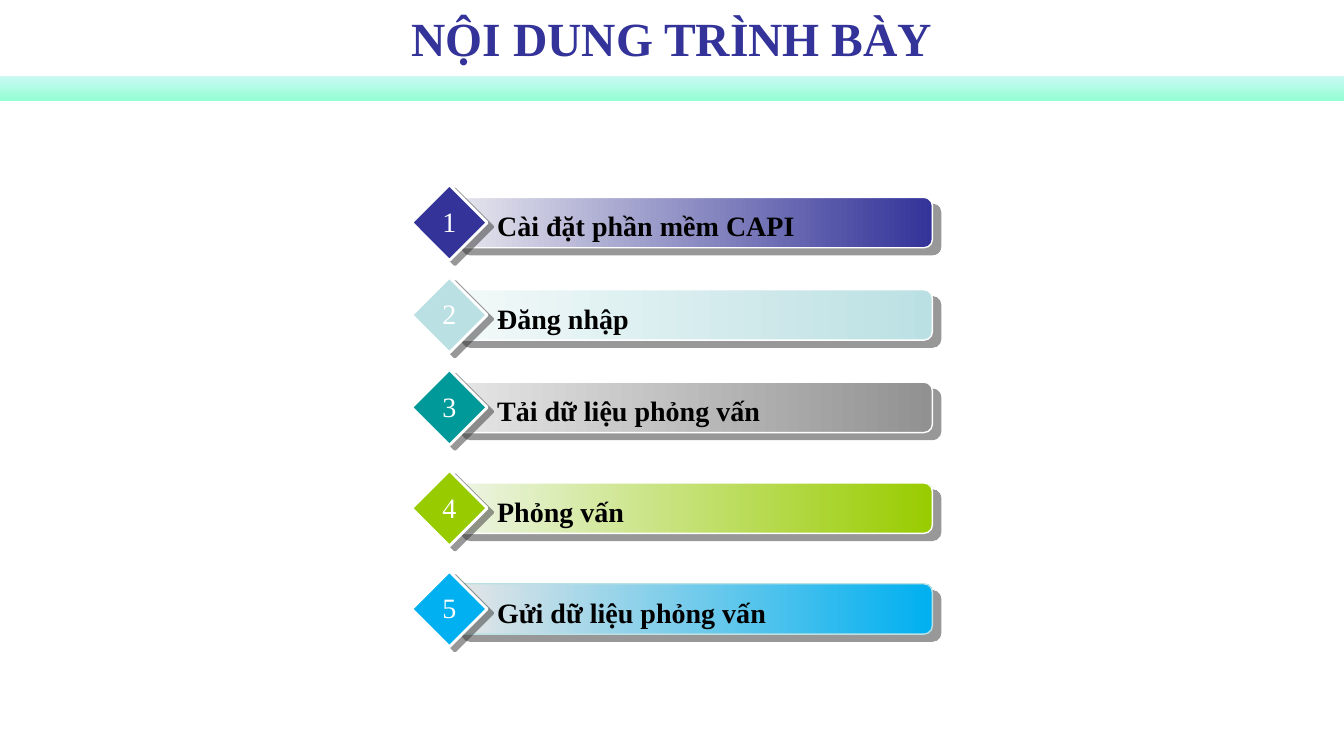
"""Build the agenda slide with five numbered gradient bars."""
from dataclasses import dataclass
from typing import Any

import lxml.etree
import pptx
import pptx.dml.color
import pptx.enum.shapes
import pptx.enum.text
import pptx.oxml.ns
import pptx.util

Pt = pptx.util.Pt
RGBColor = pptx.dml.color.RGBColor
MSO_SHAPE = pptx.enum.shapes.MSO_SHAPE
PP_ALIGN = pptx.enum.text.PP_ALIGN
MSO_ANCHOR = pptx.enum.text.MSO_ANCHOR
MSO_AUTO_SIZE = pptx.enum.text.MSO_AUTO_SIZE
qn = pptx.oxml.ns.qn

WHITE = RGBColor(0xFF, 0xFF, 0xFF)
BLACK = RGBColor(0x00, 0x00, 0x00)
INDIGO = RGBColor(0x33, 0x33, 0x99)
PALE_INDIGO = RGBColor(0xE7, 0xE7, 0xEE)
ICE = RGBColor(0xBB, 0xE0, 0xE3)
PALE_ICE = RGBColor(0xF3, 0xF9, 0xF9)
TEAL = RGBColor(0x00, 0x99, 0x99)
GREY = RGBColor(0x91, 0x91, 0x91)
PALE_GREY = RGBColor(0xE6, 0xE6, 0xE6)
LIME = RGBColor(0x99, 0xCC, 0x00)
PALE_LIME = RGBColor(0xEE, 0xF5, 0xE6)
SKY = RGBColor(0x00, 0xB0, 0xF0)
BAND_TOP = RGBColor(0xCB, 0xF9, 0xF5)
BAND_BOTTOM = RGBColor(0x94, 0xFE, 0xD3)
SHADOW = RGBColor(0x33, 0x33, 0x33)

FONT = "Times New Roman"
TITLE_FORMAT = {"name": FONT, "size": Pt(34), "bold": True}
LABEL_FORMAT = {"name": FONT, "size": Pt(20), "bold": True}
NUMBER_FORMAT = {"name": FONT, "size": Pt(20), "bold": False}


@dataclass(frozen=True)
class Box:
    """A rectangle in points."""

    left: float
    top: float
    width: float
    height: float

    def lengths(self) -> list[pptx.util.Length]:
        """Return the four lengths in drawing order."""
        return [Pt(v) for v in (self.left, self.top, self.width, self.height)]


@dataclass(frozen=True)
class AgendaItem:
    """One numbered line of the agenda."""

    label: str
    top: float
    badge_color: RGBColor
    bar_start: RGBColor
    bar_end: RGBColor
    bar_outline: RGBColor = WHITE
    label_width: float = 318


AGENDA = [
    AgendaItem("Cài đặt phần mềm CAPI", 132, INDIGO, PALE_INDIGO, INDIGO, label_width=264),
    AgendaItem("Đăng nhập", 198, ICE, PALE_ICE, ICE, label_width=264),
    AgendaItem("Tải dữ liệu phỏng vấn", 264, TEAL, PALE_GREY, GREY),
    AgendaItem("Phỏng vấn", 336, LIME, PALE_LIME, LIME),
    AgendaItem("Gửi dữ liệu phỏng vấn", 408, SKY, PALE_GREY, SKY, ICE),
]


def add_form(shapes: Any, kind: Any, box: Box) -> Any:
    """Add a preset shape without inherited shadow or outline."""
    form = shapes.add_shape(kind, *box.lengths())
    form.shadow.inherit = False
    form.line.fill.background()
    return form


def fill_gradient(form: Any, start: RGBColor, end: RGBColor, angle: float) -> None:
    """Fill a shape with a two-colour linear gradient."""
    form.fill.gradient()
    form.fill.gradient_angle = angle
    for stop, color in zip(form.fill.gradient_stops, (start, end)):
        stop.color.rgb = color


def set_outline(form: Any, color: RGBColor, width: float) -> None:
    """Give a shape a solid outline."""
    form.line.color.rgb = color
    form.line.width = Pt(width)


def cast_shadow(form: Any, distance: float, degrees: int) -> None:
    """Add a sharp half-transparent offset shadow."""
    effects = form._element.spPr.find(qn("a:effectLst"))
    outer = lxml.etree.SubElement(
        effects, qn("a:outerShdw"), blurRad="0", dist=str(Pt(distance)),
        dir=str(degrees * 60000), algn="ctr", rotWithShape="0")
    color = lxml.etree.SubElement(outer, qn("a:srgbClr"), val=str(SHADOW))
    lxml.etree.SubElement(color, qn("a:alpha"), val="50000")


def add_text(shapes: Any, box: Box, text: str, font_format: dict[str, Any],
             color: RGBColor, align: Any, anchor: Any = MSO_ANCHOR.TOP,
             auto_size: Any = MSO_AUTO_SIZE.SHAPE_TO_FIT_TEXT) -> None:
    """Add one line of formatted text."""
    frame = shapes.add_textbox(*box.lengths()).text_frame
    frame_format = {"word_wrap": True, "auto_size": auto_size, "vertical_anchor": anchor}
    for key, value in frame_format.items():
        setattr(frame, key, value)
    paragraph = frame.paragraphs[0]
    paragraph.alignment = align
    run = paragraph.add_run()
    run.text = text
    for key, value in font_format.items():
        setattr(run.font, key, value)
    run.font.color.rgb = color


def add_agenda_item(shapes: Any, number: int, item: AgendaItem) -> None:
    """Draw the bar, diamond, label and number of one agenda line."""
    row = shapes.add_group_shape().shapes
    bar = add_form(row, MSO_SHAPE.ROUNDED_RECTANGLE, Box(324, item.top + 9, 342, 36))
    fill_gradient(bar, item.bar_start, item.bar_end, 0)
    set_outline(bar, item.bar_outline, 1)
    cast_shadow(bar, 7.8, 40)

    badge = add_form(row, MSO_SHAPE.DIAMOND, Box(294, item.top, 54, 54))
    badge.fill.solid()
    badge.fill.fore_color.rgb = item.badge_color
    set_outline(badge, WHITE, 2)
    cast_shadow(badge, 5, 37)

    add_text(row, Box(348, item.top + 13.5, item.label_width, 31.5), item.label,
             LABEL_FORMAT, BLACK, PP_ALIGN.LEFT)
    add_text(row, Box(306, item.top + 10.5, 30, 31.5), str(number),
             NUMBER_FORMAT, WHITE, PP_ALIGN.CENTER)


def main() -> None:
    """Build and save the presentation."""
    deck = pptx.Presentation()
    deck.slide_width, deck.slide_height = Pt(960), Pt(540)
    shapes = deck.slides.add_slide(deck.slide_layouts[6]).shapes

    band = add_form(shapes, MSO_SHAPE.RECTANGLE, Box(0, 54, 960, 18))
    fill_gradient(band, BAND_TOP, BAND_BOTTOM, 270)
    add_text(shapes, Box(120, 0, 720, 54), "NỘI DUNG TRÌNH BÀY", TITLE_FORMAT, INDIGO,
             PP_ALIGN.CENTER, MSO_ANCHOR.MIDDLE, MSO_AUTO_SIZE.NONE)
    for number, item in enumerate(AGENDA, start=1):
        add_agenda_item(shapes, number, item)

    deck.save("out.pptx")


if __name__ == "__main__":
    main()
